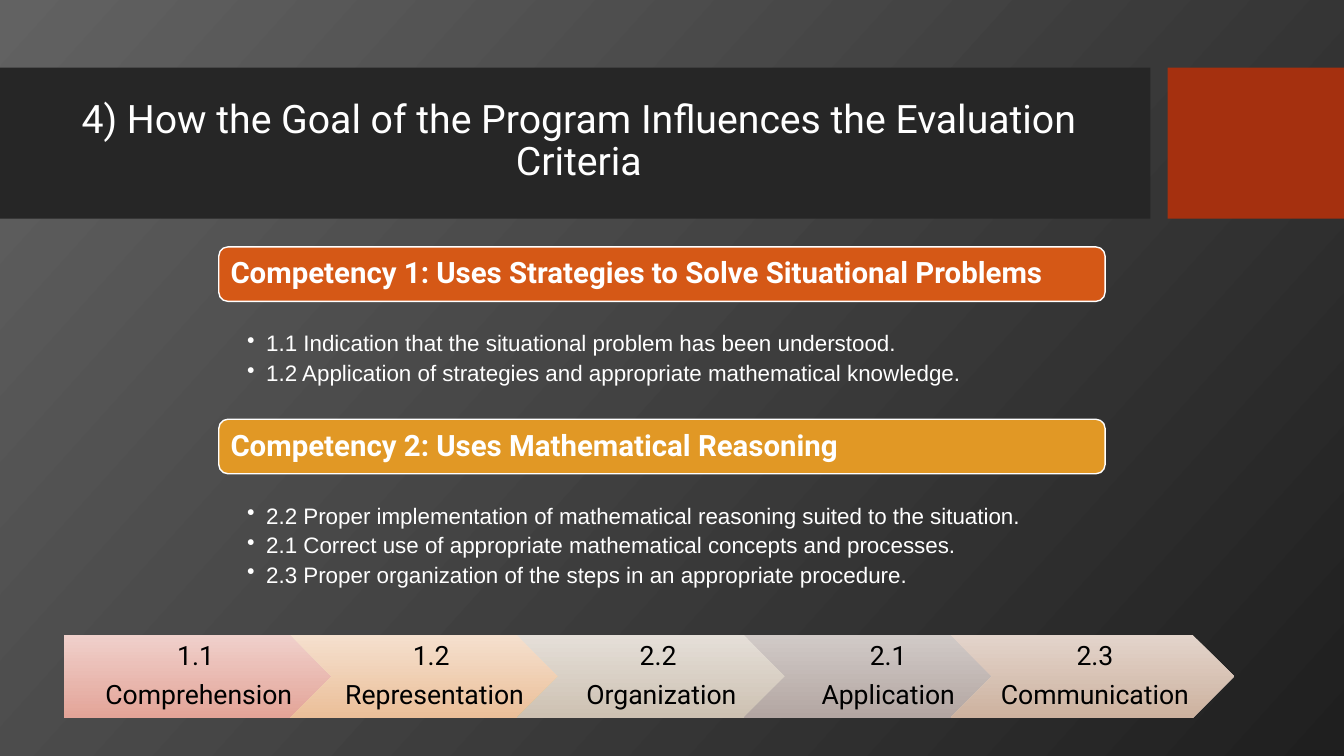
from dataclasses import dataclass

import pptx
import pptx.dml.color
import pptx.dml.fill
import pptx.enum.shapes
import pptx.enum.text
import pptx.oxml.ns
import pptx.shapes.autoshape
import pptx.shapes.base
import pptx.slide
import pptx.text.text
import pptx.util
from lxml import etree

Inches = pptx.util.Inches
Pt = pptx.util.Pt
PresetShape = pptx.enum.shapes.MSO_SHAPE
Align = pptx.enum.text.PP_ALIGN
Anchor = pptx.enum.text.MSO_ANCHOR


@dataclass(frozen=True)
class Theme:
    heading_font: str = "Roboto"
    body_font: str = "Arial"
    light: str = "FFFFFF"
    dark: str = "000000"
    backdrop: tuple[str, str] = ("626262", "1F1F1F")
    title_band: str = "262626"
    accent_band: str = "A5300F"
    title_size: float = 28
    competency_size: float = 21
    step_size: float = 19
    criterion_size: float = 16
    line_spacing: float = 0.9


@dataclass(frozen=True)
class Box:
    left: float
    top: float
    width: float
    height: float

    def lengths(self) -> tuple[int, int, int, int]:
        return (Inches(self.left), Inches(self.top),
                Inches(self.width), Inches(self.height))


@dataclass(frozen=True)
class TextStyle:
    font: str
    size: float
    color: str
    align: Align = Align.LEFT
    bold: bool = False
    space_after: float = 0
    bulleted: bool = False


@dataclass(frozen=True)
class Competency:
    heading: str
    color: str
    top: float
    criteria_height: float
    criteria: tuple[str, ...]


@dataclass(frozen=True)
class Step:
    left: float
    lines: tuple[str, str]
    gradient: tuple[str, str]


THEME = Theme()
TITLE_STYLE = TextStyle(THEME.heading_font, THEME.title_size, THEME.light, Align.CENTER)
HEADING_STYLE = TextStyle(THEME.heading_font, THEME.competency_size, THEME.light, bold=True)
STEP_STYLE = TextStyle(THEME.heading_font, THEME.step_size, THEME.dark, Align.CENTER,
                       space_after=7)
CRITERION_STYLE = TextStyle(THEME.body_font, THEME.criterion_size, THEME.light,
                            space_after=3.8, bulleted=True)

BAND_TOP, BAND_HEIGHT = 0.67, 1.5
COMPETENCY_LEFT, COMPETENCY_WIDTH, HEADING_HEIGHT = 2.17, 8.79, 0.54
STEP_TOP, STEP_WIDTH, STEP_HEIGHT = 6.3, 2.81, 0.82

COMPETENCIES = (
    Competency("Competency 1: Uses Strategies to Solve Situational Problems", "D55816", 2.45, 1.16, (
        "1.1 Indication that the situational problem has been understood.",
        "1.2 Application of strategies and appropriate mathematical knowledge.")),
    Competency("Competency 2: Uses Mathematical Reasoning", "E19825", 4.16, 1.43, (
        "2.2 Proper implementation of mathematical reasoning suited to the situation.",
        "2.1 Correct use of appropriate mathematical concepts and processes.",
        "2.3 Proper organization of the steps in an appropriate procedure.")),
)
STEPS = (
    Step(0.63, ("1.1 ", "Comprehension"), ("F0D0CB", "E3A498")),
    Step(2.88, ("1.2 ", "Representation"), ("F5E0CE", "EBBF99")),
    Step(5.13, ("2.2 ", "Organization"), ("E5DFD8", "CDC1B2")),
    Step(7.38, ("2.1", "Application"), ("D1CAC7", "B3A6A2")),
    Step(9.43, ("2.3", "Communication"), ("E3D4CB", "CDB29F")),
)


def rgb(value: str) -> pptx.dml.color.RGBColor:
    return pptx.dml.color.RGBColor.from_string(value)


def fill_gradient(fill: pptx.dml.fill.FillFormat, colors: tuple[str, str],
                  clockwise_angle: float) -> None:
    fill.gradient()
    fill.gradient_angle = 360 - clockwise_angle
    for stop, color in zip(fill.gradient_stops, colors):
        stop.color.rgb = rgb(color)


def add_bullet(paragraph: pptx.text.text._Paragraph) -> None:
    properties = paragraph._p.get_or_add_pPr()
    properties.set("marL", str(Inches(0.19)))
    properties.set("indent", str(-Inches(0.19)))
    bullet = etree.SubElement(properties, pptx.oxml.ns.qn("a:buChar"))
    bullet.set("char", "•")


def write_text(shape: pptx.shapes.base.BaseShape, lines: tuple[str, ...], style: TextStyle,
               insets: tuple[float, float, float, float] = (0.1, 0.05, 0.1, 0.05),
               anchor: Anchor = Anchor.MIDDLE) -> None:
    """Fill a shape with one paragraph per line; insets run left, top, right, bottom."""
    frame = shape.text_frame
    frame.word_wrap = True
    frame.auto_size = pptx.enum.text.MSO_AUTO_SIZE.NONE
    frame.vertical_anchor = anchor
    (frame.margin_left, frame.margin_top,
     frame.margin_right, frame.margin_bottom) = map(Inches, insets)
    for index, line in enumerate(lines):
        paragraph = frame.add_paragraph() if index else frame.paragraphs[0]
        if style.bulleted:
            add_bullet(paragraph)
        paragraph.alignment = style.align
        paragraph.line_spacing = THEME.line_spacing
        paragraph.space_before = Pt(0)
        paragraph.space_after = Pt(style.space_after)
        run = paragraph.add_run()
        run.text = line
        run.font.name = style.font
        run.font.size = Pt(style.size)
        run.font.bold = style.bold
        run.font.color.rgb = rgb(style.color)


def add_plain_shape(slide: pptx.slide.Slide, preset: PresetShape,
                    box: Box) -> pptx.shapes.autoshape.Shape:
    shape = slide.shapes.add_shape(preset, *box.lengths())
    shape.shadow.inherit = False
    shape.line.fill.background()
    return shape


def add_title(slide: pptx.slide.Slide) -> None:
    """Place the title in front of its two bands."""
    title = slide.shapes.title
    for left, width, color in ((0, 11.41, THEME.title_band), (11.58, 1.75, THEME.accent_band)):
        band = add_plain_shape(slide, PresetShape.RECTANGLE,
                               Box(left, BAND_TOP, width, BAND_HEIGHT))
        band.fill.solid()
        band.fill.fore_color.rgb = rgb(color)
        title._element.addprevious(band._element)
    title.left, title.top, title.width, title.height = Box(0.22, 0.82, 11.04, 1.17).lengths()
    write_text(title, ("4) How the Goal of the Program Influences the Evaluation Criteria",),
               TITLE_STYLE)


def add_competency(slide: pptx.slide.Slide, competency: Competency) -> None:
    heading = add_plain_shape(slide, PresetShape.ROUNDED_RECTANGLE, Box(
        COMPETENCY_LEFT, competency.top, COMPETENCY_WIDTH, HEADING_HEIGHT))
    heading.fill.solid()
    heading.fill.fore_color.rgb = rgb(competency.color)
    heading.line.color.rgb = rgb(THEME.light)
    heading.line.width = Pt(1)
    write_text(heading, (competency.heading,), HEADING_STYLE, (0.09, 0.09, 0.09, 0.09))

    criteria = slide.shapes.add_textbox(*Box(
        COMPETENCY_LEFT, competency.top + HEADING_HEIGHT,
        COMPETENCY_WIDTH, competency.criteria_height).lengths())
    write_text(criteria, competency.criteria, CRITERION_STYLE,
               (0.28, 0.31, 0.16, 0.03), Anchor.TOP)


def add_step(slide: pptx.slide.Slide, step: Step, is_first: bool) -> None:
    preset = PresetShape.PENTAGON if is_first else PresetShape.CHEVRON
    arrow = add_plain_shape(slide, preset, Box(step.left, STEP_TOP, STEP_WIDTH, STEP_HEIGHT))
    fill_gradient(arrow.fill, step.gradient, 90)
    write_text(arrow, step.lines, STEP_STYLE, (0.11 if is_first else 0.08, 0.06, 0.03, 0.06))


def main() -> None:
    deck = pptx.Presentation()
    deck.slide_width, deck.slide_height = Inches(13.33), Inches(7.5)
    slide = deck.slides.add_slide(deck.slide_layouts.get_by_name("Title Only"))
    fill_gradient(slide.background.fill, THEME.backdrop, 42)
    add_title(slide)
    for index, step in enumerate(STEPS):
        add_step(slide, step, index == 0)
    for competency in COMPETENCIES:
        add_competency(slide, competency)
    deck.save("out.pptx")


if __name__ == "__main__":
    main()
